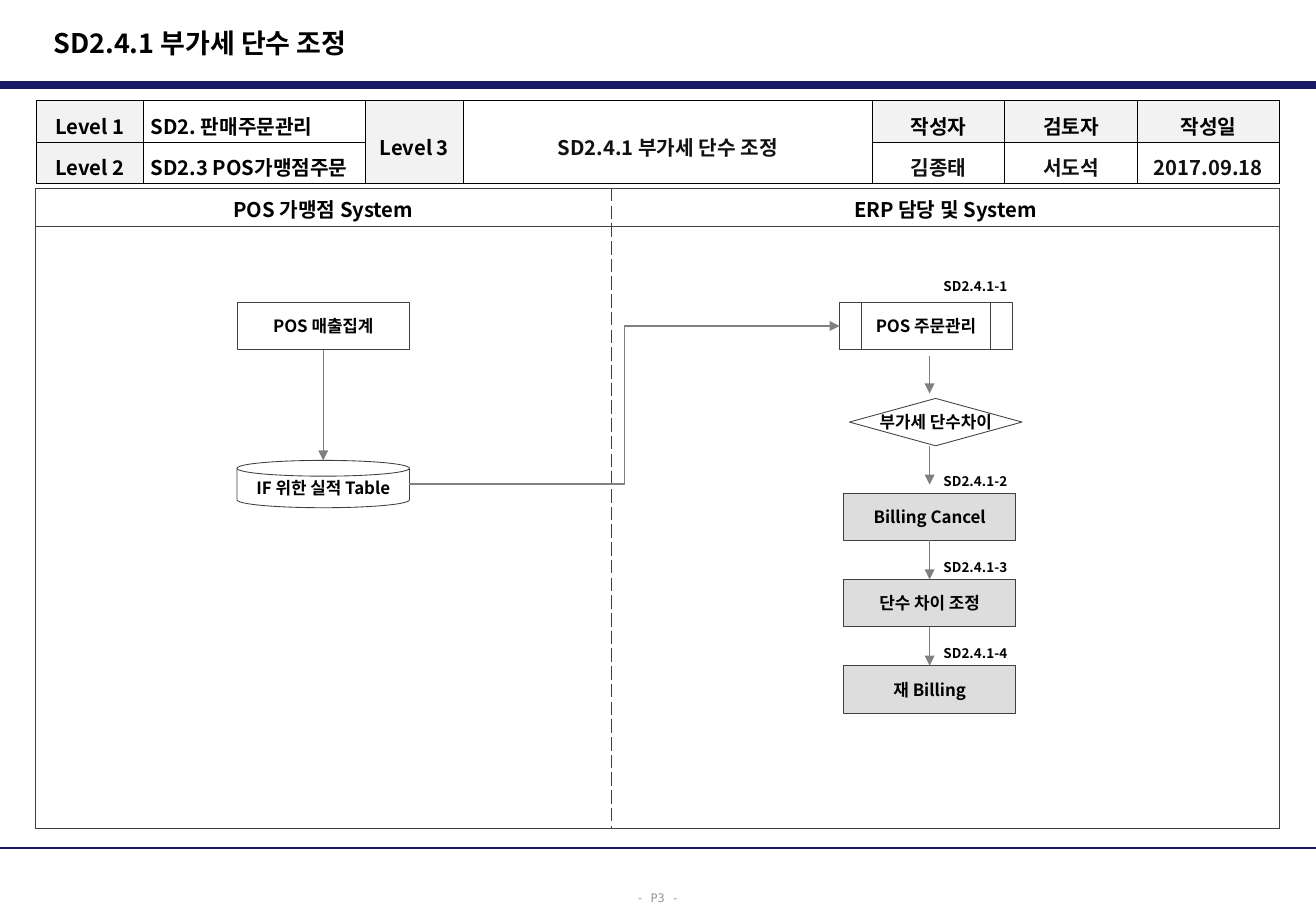
import pptx
import pptx.util
import pptx.dml.color
import pptx.enum.shapes
import pptx.enum.text
import pptx.oxml
import pptx.oxml.ns

Inches, Pt = pptx.util.Inches, pptx.util.Pt
SHAPE = pptx.enum.shapes.MSO_SHAPE
LINK = pptx.enum.shapes.MSO_CONNECTOR
ALIGN = pptx.enum.text.PP_ALIGN
MIDDLE = pptx.enum.text.MSO_ANCHOR.MIDDLE

WIDTH, HEIGHT = 10.83, 7.5
FONT, PAGE_FONT = "Noto Sans CJK KR", "DejaVu Sans Mono"
COLORS = {"navy": "191966", "ink": "000000", "soft ink": "111111", "outline": "404040",
          "arrow": "808080", "page": "969696", "head": "F2F2F2", "step": "DDDDDD",
          "white": "FFFFFF"}

TITLE = "SD2.4.1 부가세 단수 조정"
PAGE_NUMBER = "- P3 -"
LANES = ["POS 가맹점 System", "ERP 담당 및 System"]
LANE_COLUMNS, LANE_ROWS = [4.74, 5.5], [0.31, 4.96]
INFO_COLUMNS, INFO_ROWS = [0.88, 1.83, 0.8, 3.37, 1.09, 1.09, 1.17], [0.34, 0.34]
# (row, column, text, is a heading, text colour, alignment)
INFO = [
    (0, 0, "Level 1", True, "ink", ALIGN.CENTER),
    (0, 1, "SD2. 판매주문관리", False, "ink", ALIGN.LEFT),
    (0, 2, "Level 3", True, "ink", ALIGN.CENTER),
    (0, 3, TITLE, False, "soft ink", ALIGN.CENTER),
    (0, 4, "작성자", True, "ink", ALIGN.CENTER),
    (0, 5, "검토자", True, "ink", ALIGN.CENTER),
    (0, 6, "작성일", True, "ink", ALIGN.CENTER),
    (1, 0, "Level 2", True, "ink", ALIGN.CENTER),
    (1, 1, "SD2.3 POS가맹점주문", False, "ink", ALIGN.LEFT),
    (1, 4, "김종태", False, "soft ink", ALIGN.CENTER),
    (1, 5, "서도석", False, "soft ink", ALIGN.CENTER),
    (1, 6, "2017.09.18", False, "soft ink", ALIGN.CENTER),
]
TALL_COLUMNS = (2, 3)

NODE_WIDTH, NODE_HEIGHT = 1.42, 0.39
POS_LEFT, STEP_LEFT = 1.95, 6.94
STEP_TOP, STEP_PITCH = 4.06, 0.71
STEPS = ["Billing Cancel", "단수 차이 조정", "재 Billing"]
# name: (shape, left, top, text, fill, wraps)
NODES = {
    "sales": (SHAPE.RECTANGLE, POS_LEFT, 2.49, "POS 매출집계", "white", True),
    "table": (SHAPE.FLOWCHART_MAGNETIC_DISK, POS_LEFT, 3.79, "IF 위한 실적 Table",
              "white", False),
    "order": (SHAPE.FLOWCHART_PREDEFINED_PROCESS, 6.91, 2.49, "POS 주문관리", "white", True),
    "check": (SHAPE.DIAMOND, 6.99, 3.28, "부가세 단수차이", "white", False),
}
for index, step in enumerate(STEPS):
    NODES[index] = (SHAPE.RECTANGLE, STEP_LEFT, STEP_TOP + index * STEP_PITCH, step,
                    "step", True)
LABEL_LEFT, LABEL_WIDTH, LABEL_HEIGHT = 7.7, 0.59, 0.21
LABEL_TOPS = [2.25] + [STEP_TOP - LABEL_HEIGHT + i * STEP_PITCH for i in range(len(STEPS))]


def rgb(name):
    return pptx.dml.color.RGBColor.from_string(COLORS[name])


def write(frame, text, size, color="ink", align=ALIGN.LEFT, font=FONT, bold=True, spacing=None):
    para = frame.paragraphs[0]
    para.alignment = align
    if spacing:
        para.line_spacing = spacing
    span = para.add_run()
    span.text = text
    span.font.size, span.font.bold, span.font.name = Pt(size), bold, font
    span.font.color.rgb = rgb(color)
    east_asian = pptx.oxml.parse_xml(
        f'<a:ea {pptx.oxml.ns.nsdecls("a")} typeface="{font}"/>')
    span.font._element.find(pptx.oxml.ns.qn("a:latin")).addnext(east_asian)


def set_insets(frame, side, end):
    frame.margin_left = frame.margin_right = Inches(side)
    frame.margin_top = frame.margin_bottom = Inches(end)


def set_borders(cell, color, dashed=""):
    """Draw thin borders; dashed names the sides, out of L R T B, that are broken."""
    properties = cell._tc.get_or_add_tcPr()
    for place, side in enumerate("LRTB"):
        dash = "dash" if side in dashed else "solid"
        properties.insert(place, pptx.oxml.parse_xml(
            f'<a:ln{side} {pptx.oxml.ns.nsdecls("a")} w="{Pt(0.5)}"><a:solidFill>'
            f'<a:srgbClr val="{COLORS[color]}"/></a:solidFill>'
            f'<a:prstDash val="{dash}"/></a:ln{side}>'))


def add_grid(page, left, top, columns, rows):
    grid = page.shapes.add_table(len(rows), len(columns), Inches(left), Inches(top),
                                 Inches(sum(columns)), Inches(sum(rows))).table
    grid.first_row = grid.horz_banding = False
    for column, width in zip(grid.columns, columns):
        column.width = Inches(width)
    for row, height in zip(grid.rows, rows):
        row.height = Inches(height)
    for cell in grid.iter_cells():
        cell.fill.background()
    return grid


def add_line(page, start, end, color, width, kind=LINK.STRAIGHT, arrow=False):
    line = page.shapes.add_connector(kind, *(Inches(value) for value in start + end))
    line.line.color.rgb = rgb(color)
    line.line.width = Pt(width)
    namespace = pptx.oxml.ns.nsdecls("a")
    if arrow:
        line.line._get_or_add_ln().append(
            pptx.oxml.parse_xml(f'<a:tailEnd {namespace} type="triangle"/>'))
    line._element.spPr.append(pptx.oxml.parse_xml(f"<a:effectLst {namespace}/>"))
    return line


def add_lanes(page):
    grid = add_grid(page, 0.29, 1.55, LANE_COLUMNS, LANE_ROWS)
    for column, (lane, broken) in enumerate(zip(LANES, "RL")):
        write(grid.cell(0, column).text_frame, lane, 12, align=ALIGN.CENTER)
        for row in range(len(LANE_ROWS)):
            set_borders(grid.cell(row, column), "outline", broken)


def add_info(page):
    grid = add_grid(page, 0.3, 0.83, INFO_COLUMNS, INFO_ROWS)
    for cell in grid.iter_cells():
        set_borders(cell, "ink")
        set_insets(cell, 0.06, 0.01)
        cell.vertical_anchor = MIDDLE
    for column in TALL_COLUMNS:
        grid.cell(0, column).merge(grid.cell(1, column))
    for row, column, text, heading, color, align in INFO:
        cell = grid.cell(row, column)
        write(cell.text_frame, text, 12, color, align, spacing=1.3)
        if heading:
            cell.fill.solid()
            cell.fill.fore_color.rgb = rgb("head")


def add_node(page, kind, left, top, text, fill, wraps):
    node = page.shapes.add_shape(kind, Inches(left), Inches(top),
                                 Inches(NODE_WIDTH), Inches(NODE_HEIGHT))
    node.shadow.inherit = False
    node.fill.solid()
    node.fill.fore_color.rgb = rgb(fill)
    node.line.color.rgb = rgb("outline")
    node.line.width = Pt(0.5)
    frame = node.text_frame
    frame.word_wrap = wraps
    frame.vertical_anchor = MIDDLE
    set_insets(frame, 0.04, 0 if kind == SHAPE.DIAMOND else 0.05)
    write(frame, text, 10, align=ALIGN.CENTER)
    return node


def add_flow(page):
    nodes = {name: add_node(page, *node) for name, node in NODES.items()}
    middle = NODE_HEIGHT / 2
    pos_x, step_x = POS_LEFT + NODE_WIDTH / 2, STEP_LEFT + NODE_WIDTH / 2
    sales_top, table_top = NODES["sales"][2], NODES["table"][2]
    arrow = add_line(page, (pos_x, sales_top + NODE_HEIGHT), (pos_x, table_top),
                     "arrow", 0.75, arrow=True)
    arrow.begin_connect(nodes["sales"], 2)
    arrow = add_line(page, (POS_LEFT + NODE_WIDTH, table_top + middle),
                     (NODES["order"][1], NODES["order"][2] + middle),
                     "arrow", 0.75, LINK.ELBOW, True)
    arrow.end_connect(nodes["order"], 1)
    for start, end in [(2.93, 3.24), (3.67, 3.99)]:
        add_line(page, (step_x, start), (step_x, end), "arrow", 0.75, arrow=True)
    for index in range(1, len(STEPS)):
        top = NODES[index][2]
        arrow = add_line(page, (step_x, top - STEP_PITCH + NODE_HEIGHT), (step_x, top),
                         "arrow", 0.75, arrow=True)
        arrow.begin_connect(nodes[index - 1], 2)
        arrow.end_connect(nodes[index], 0)
    for number, top in enumerate(LABEL_TOPS, 1):
        box = page.shapes.add_textbox(Inches(LABEL_LEFT), Inches(top),
                                      Inches(LABEL_WIDTH), Inches(LABEL_HEIGHT))
        box.text_frame.word_wrap = True
        set_insets(box.text_frame, 0, 0.04)
        write(box.text_frame, f"SD2.4.1-{number}", 8, align=ALIGN.RIGHT)


def main():
    deck = pptx.Presentation()
    deck.slide_width, deck.slide_height = Inches(WIDTH), Inches(HEIGHT)
    page = deck.slides.add_slide(deck.slide_layouts[5])
    title = page.shapes.title
    title.left, title.top, title.width, title.height = map(Inches, (0.34, 0.16, 7.11, 0.38))
    title.text_frame.vertical_anchor = MIDDLE
    write(title.text_frame, TITLE, 16)
    for y, weight in [(0.7, 4.5), (6.98, 1.5)]:
        add_line(page, (0, y), (WIDTH, y), "navy", weight)
    footer = page.shapes.add_textbox(Inches(5.14), Inches(7.25), Inches(0.56), Inches(0.25))
    footer.text_frame.word_wrap = False
    write(footer.text_frame, PAGE_NUMBER, 7, "page", font=PAGE_FONT, bold=False, spacing=1.3)
    add_lanes(page)
    add_info(page)
    add_flow(page)
    deck.save("out.pptx")


if __name__ == "__main__":
    main()
